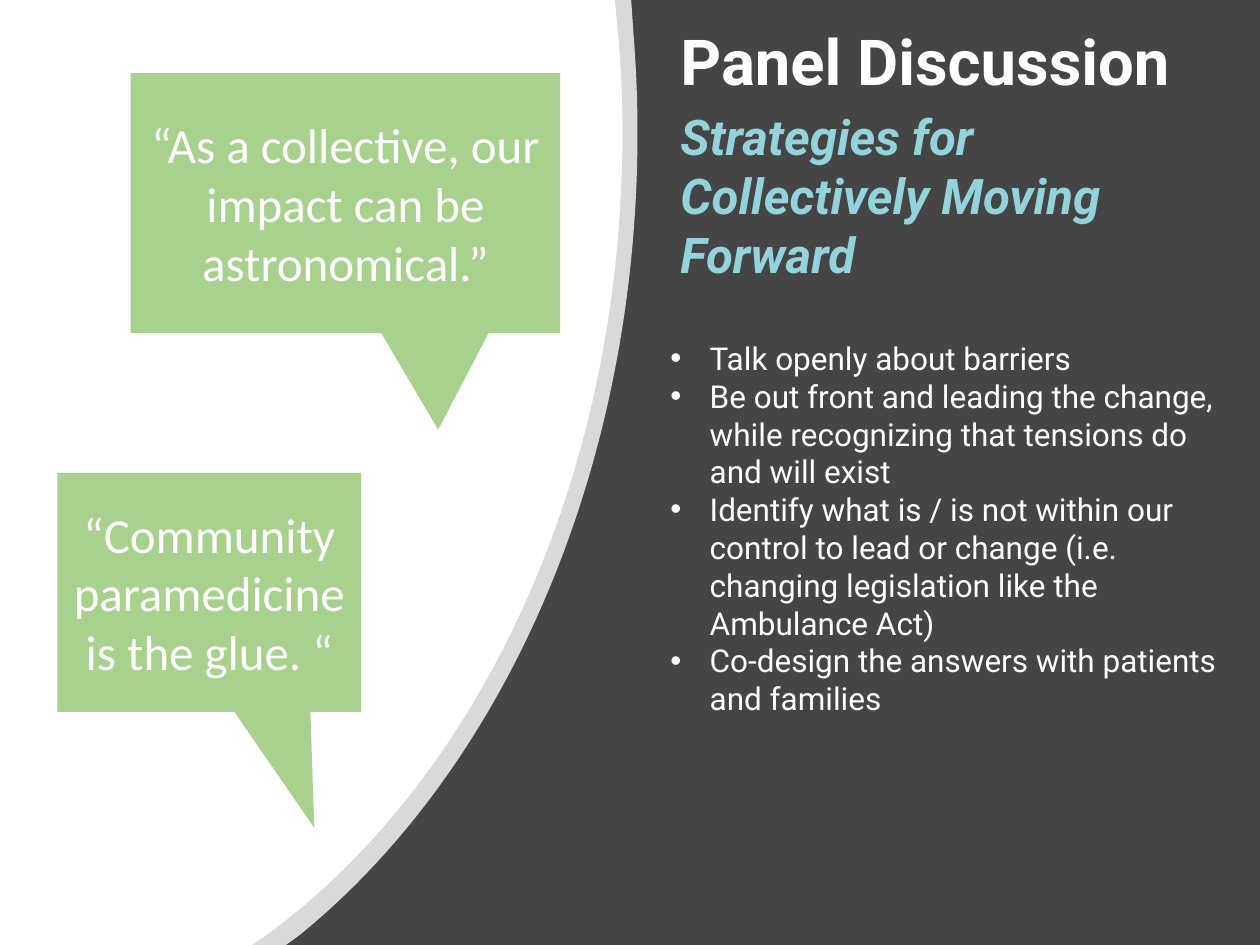
"""Build the panel discussion slide with two quote callouts and a list of strategies."""
import pptx
import pptx.dml.color
import pptx.enum.shapes
import pptx.enum.text
import pptx.oxml.ns
import pptx.util
from lxml import etree

Pt = pptx.util.Pt
qn = pptx.oxml.ns.qn
ALIGN = pptx.enum.text.PP_ALIGN
ANCHOR = pptx.enum.text.MSO_ANCHOR

COLORS = {"background": "454545", "white": "FFFFFF", "subtitle": "92D3DC", "callout": "A9D18E"}

TITLE_BOX = (381.6, 8.64, 326.88, 169.2)
TITLE_LINES = [
    {"text": "Panel Discussion", "size": 36.2, "color": "white", "italic": False, "spacing": 0.7},
    {"text": "Strategies for Collectively Moving Forward", "size": 28.1,
     "color": "subtitle", "italic": True, "spacing": 1.0},
]

LIST_BOX = (375.84, 190.08, 338.4, 388.8)
LIST_INDENT = 22.5
STRATEGIES = [
    "Talk openly about barriers",
    "Be out front and leading the change, while recognizing that tensions do and will exist",
    "Identify what is / is not within our control to lead or change "
    "(i.e. changing legislation like the Ambulance Act)",
    "Co-design the answers with patients and families",
]

CALLOUTS = [
    ("“As a collective, our impact can be astronomical.”",
     (74.6, 41.76, 245.52, 148.5), (0.216, 0.872)),
    ("“Community paramedicine is the glue. “",
     (32.8, 270.2, 173.52, 136.6), (0.346, 0.985)),
]

CURVED_PANELS = [
    {"opacity": 80, "start": (0, 0), "segments": [
        [(360.72, 0)],
        [(362.16, 20.88)],
        [(363.6, 38.88), (364.32, 57.6), (364.32, 75.6)],
        [(364.32, 270), (287.28, 439.92), (171.36, 534.24)],
        [(163.44, 540)],
        [(0, 540)],
    ]},
    {"opacity": 100, "start": (351.36, 0), "segments": [
        [(0, 0)],
        [(0, 540)],
        [(144, 540)],
        [(150.48, 535.68)],
        [(272.88, 447.12), (355.68, 274.32), (355.68, 75.6)],
        [(355.68, 57.6), (354.96, 39.6), (353.52, 22.32)],
    ]},
]


def color(name):
    return pptx.dml.color.RGBColor.from_string(COLORS[name])


def place(shape, box):
    shape.left, shape.top, shape.width, shape.height = map(Pt, box)


def fill_plain(shape, name):
    shape.shadow.inherit = False
    shape.fill.solid()
    shape.fill.fore_color.rgb = color(name)
    shape.line.fill.background()


def prepare_frame(shape, anchor):
    frame = shape.text_frame
    frame.word_wrap = True
    frame.auto_size = pptx.enum.text.MSO_AUTO_SIZE.NONE
    frame.vertical_anchor = anchor
    return frame


def paragraph_at(frame, index):
    return frame.paragraphs[0] if index == 0 else frame.add_paragraph()


def add_run(paragraph, text, font_name, size, color_name):
    run = paragraph.add_run()
    run.text = text
    run.font.name = font_name
    run.font.size = Pt(size)
    run.font.color.rgb = color(color_name)
    return run


def bend_segments(shape, segments):
    lines = list(shape.element.iter(qn("a:lnTo")))
    for line, segment in zip(lines, segments):
        if len(segment) == 3:
            curve = etree.Element(qn("a:cubicBezTo"))
            for x, y in segment:
                point = etree.SubElement(curve, qn("a:pt"))
                point.set("x", str(Pt(x) - shape.left))
                point.set("y", str(Pt(y) - shape.top))
            line.getparent().replace(line, curve)


def add_curved_panel(slide, panel):
    start_x, start_y = map(Pt, panel["start"])
    builder = slide.shapes.build_freeform(start_x, start_y)
    ends = [segment[-1] for segment in panel["segments"]]
    builder.add_line_segments([(Pt(x), Pt(y)) for x, y in ends], close=True)
    shape = builder.convert_to_shape()
    bend_segments(shape, panel["segments"])
    fill_plain(shape, "white")
    if panel["opacity"] < 100:
        fill_color = next(shape.element.iter(qn("a:srgbClr")))
        alpha = etree.SubElement(fill_color, qn("a:alpha"))
        alpha.set("val", str(panel["opacity"] * 1000))


def add_callout(slide, text, box, pointer):
    shape = slide.shapes.add_shape(
        pptx.enum.shapes.MSO_SHAPE.RECTANGULAR_CALLOUT, *map(Pt, box))
    fill_plain(shape, "callout")
    for index, value in enumerate(pointer):
        shape.adjustments[index] = value
    paragraph = prepare_frame(shape, ANCHOR.MIDDLE).paragraphs[0]
    paragraph.alignment = ALIGN.CENTER
    add_run(paragraph, text, "Calibri", 28, "white")


def fill_title(shape):
    place(shape, TITLE_BOX)
    frame = prepare_frame(shape, ANCHOR.MIDDLE)
    for index, line in enumerate(TITLE_LINES):
        paragraph = paragraph_at(frame, index)
        paragraph.alignment = ALIGN.LEFT
        paragraph.line_spacing = line["spacing"]
        paragraph.space_before = Pt(0)
        paragraph.space_after = Pt(6)
        run = add_run(paragraph, line["text"], "Roboto", line["size"], line["color"])
        run.font.bold = True
        run.font.italic = line["italic"]


def fill_list(shape):
    place(shape, LIST_BOX)
    frame = prepare_frame(shape, ANCHOR.TOP)
    for index, text in enumerate(STRATEGIES):
        paragraph = paragraph_at(frame, index)
        paragraph.space_before = Pt(0)
        properties = paragraph._p.get_or_add_pPr()
        properties.set("marL", str(Pt(LIST_INDENT)))
        properties.set("indent", str(-Pt(LIST_INDENT)))
        font = etree.SubElement(properties, qn("a:buFont"))
        font.set("typeface", "Arial")
        bullet = etree.SubElement(properties, qn("a:buChar"))
        bullet.set("char", "•")
        add_run(paragraph, text, "Roboto", 18, "white")


def main():
    presentation = pptx.Presentation()
    presentation.slide_width, presentation.slide_height = Pt(720), Pt(540)
    slide = presentation.slides.add_slide(presentation.slide_layouts[1])
    slide.background.fill.solid()
    slide.background.fill.fore_color.rgb = color("background")
    body = slide.placeholders[1]
    fill_title(slide.shapes.title)
    fill_list(body)
    for panel in CURVED_PANELS:
        add_curved_panel(slide, panel)
    body.element.getparent().append(body.element)
    for text, box, pointer in CALLOUTS:
        add_callout(slide, text, box, pointer)
    presentation.save("out.pptx")


if __name__ == "__main__":
    main()
